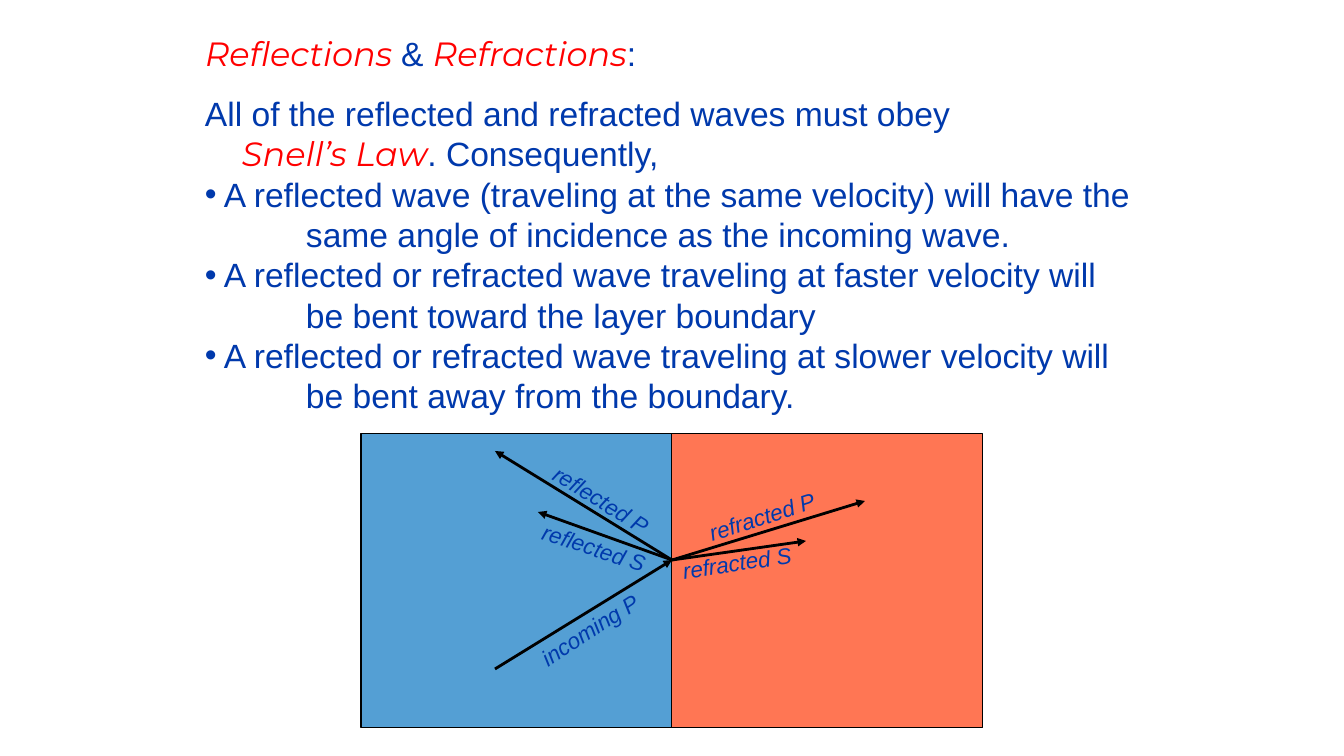
from pptx import Presentation
from pptx.dml.color import RGBColor
from pptx.enum.shapes import MSO_CONNECTOR, MSO_SHAPE
from pptx.enum.text import MSO_ANCHOR, PP_ALIGN
from pptx.oxml.ns import qn
from pptx.util import Emu, Pt
from lxml.etree import SubElement

PX = 914400 / 100.8
HUES = {"ink": "0039AC", "key": "FF0000", "line": "000000",
        "left": "0070C0", "right": "FF3300"}


def px(num):
    """Turn px into EMU."""
    return Emu(round(num * PX))


def hue(name):
    """Look up a colour."""
    return RGBColor.from_string(HUES[name])


class Board:
    """Holds the style and the current slide."""

    def __init__(self, deck):
        """Add a title-only slide."""
        self.slide = deck.slides.add_slide(deck.slide_layouts[5])
        self.shapes = self.slide.shapes

    def frame(self, shape, wrap):
        """Give a text frame its insets."""
        frame = shape.text_frame
        frame.word_wrap = wrap
        frame.vertical_anchor = MSO_ANCHOR.TOP
        frame.margin_left = frame.margin_right = px(10)
        frame.margin_top = frame.margin_bottom = px(5)
        return frame

    def runs(self, para, parts, size=24, align=PP_ALIGN.LEFT):
        """Write runs, with key terms marked by a star."""
        para.alignment = align
        for part in parts:
            key = part.startswith("*")
            run = para.add_run()
            run.text = part.lstrip("*")
            run.font.size = Pt(size)
            run.font.name = "Montserrat" if key else "Arial"
            run.font.italic = key
            run.font.color.rgb = hue("key" if key else "ink")

    def title(self, box, parts):
        """Place and fill the title."""
        shape = self.shapes.title
        shape.left, shape.top, shape.width, shape.height = map(px, box)
        self.runs(self.frame(shape, True).paragraphs[0], parts)

    def body(self, box, lines):
        """Add lines with an indent and an optional bullet."""
        frame = self.frame(self.shapes.add_textbox(*map(px, box)), False)
        for i, (gap, dot, parts) in enumerate(lines):
            para = frame.add_paragraph() if i else frame.paragraphs[0]
            self.runs(para, parts)
            props = para._p.get_or_add_pPr()
            props.set("marL", str(px(gap)))
            props.set("indent", str(px(-gap if dot else 0)))
            if dot:
                SubElement(props, qn("a:buFont")).set("typeface", "Arial")
                SubElement(props, qn("a:buChar")).set("char", "•")

    def layer(self, box, name):
        """Add a see-through rock layer."""
        shape = self.shapes.add_shape(MSO_SHAPE.RECTANGLE, *map(px, box))
        shape.shadow.inherit = False
        shape.fill.solid()
        shape.fill.fore_color.rgb = hue(name)
        tone = shape.fill._xPr.find(".//" + qn("a:srgbClr"))
        SubElement(tone, qn("a:alpha")).set("val", "67000")
        shape.line.color.rgb = hue("line")
        shape.line.width = Pt(0.75)

    def ray(self, start, end):
        """Add an arrow for a wave."""
        wave = self.shapes.add_connector(
            MSO_CONNECTOR.STRAIGHT, *map(px, start + end))
        wave.line.color.rgb = hue("line")
        wave.line.width = Pt(2)
        SubElement(wave.line._ln, qn("a:tailEnd")).set("type", "triangle")
        SubElement(wave._element.spPr, qn("a:effectLst"))

    def label(self, mid, turn, text):
        """Add a turned wave name around a middle point."""
        wide, high = 150, 38
        box = (mid[0] - wide // 2, mid[1] - high // 2, wide, high)
        shape = self.shapes.add_textbox(*map(px, box))
        shape.rotation = turn
        para = self.frame(shape, False).paragraphs[0]
        self.runs(para, [text], 16, PP_ALIGN.CENTER)
        para.runs[0].font.italic = True


def main():
    """Build the slide."""
    deck = Presentation()
    deck.slide_width, deck.slide_height = px(1344), px(756)
    board = Board(deck)
    board.title((195, 28, 955, 52),
                ["*Reflections ", "& ", "*Refractions", ":"])
    lines = [(0, False, ["All of the reflected and refracted waves must obey"]),
             (37, False, ["*Snell’s Law", ". Consequently,"])]
    rules = [
        ("A reflected wave (traveling at the same velocity) will have the",
         "same angle of incidence as the incoming wave."),
        ("A reflected or refracted wave traveling at faster velocity will",
         "be bent toward the layer boundary"),
        ("A reflected or refracted wave traveling at slower velocity will",
         "be bent away from the boundary.")]
    for head, rest in rules:
        lines += [(19, True, [head]), (101, False, [rest])]
    board.body((195, 88, 955, 336), lines)

    for i, name in enumerate(("left", "right")):
        board.layer((361 + 311 * i, 434, 311, 294), name)
    hit = (672, 560)
    board.ray((495, 669), hit)
    for end in ((495, 451), (538, 512), (865, 501), (806, 541)):
        board.ray(hit, end)
    for mid, turn, text in (
            ((590, 630), 327, "incoming P"),
            ((601, 500), 31.7, "reflected P"),
            ((594, 548), 18.2, "reflected S"),
            ((762, 517), 342.2, "refracted P"),
            ((737, 563), 351.6, "refracted S")):
        board.label(mid, turn, text)
    deck.save("out.pptx")


if __name__ == "__main__":
    main()
